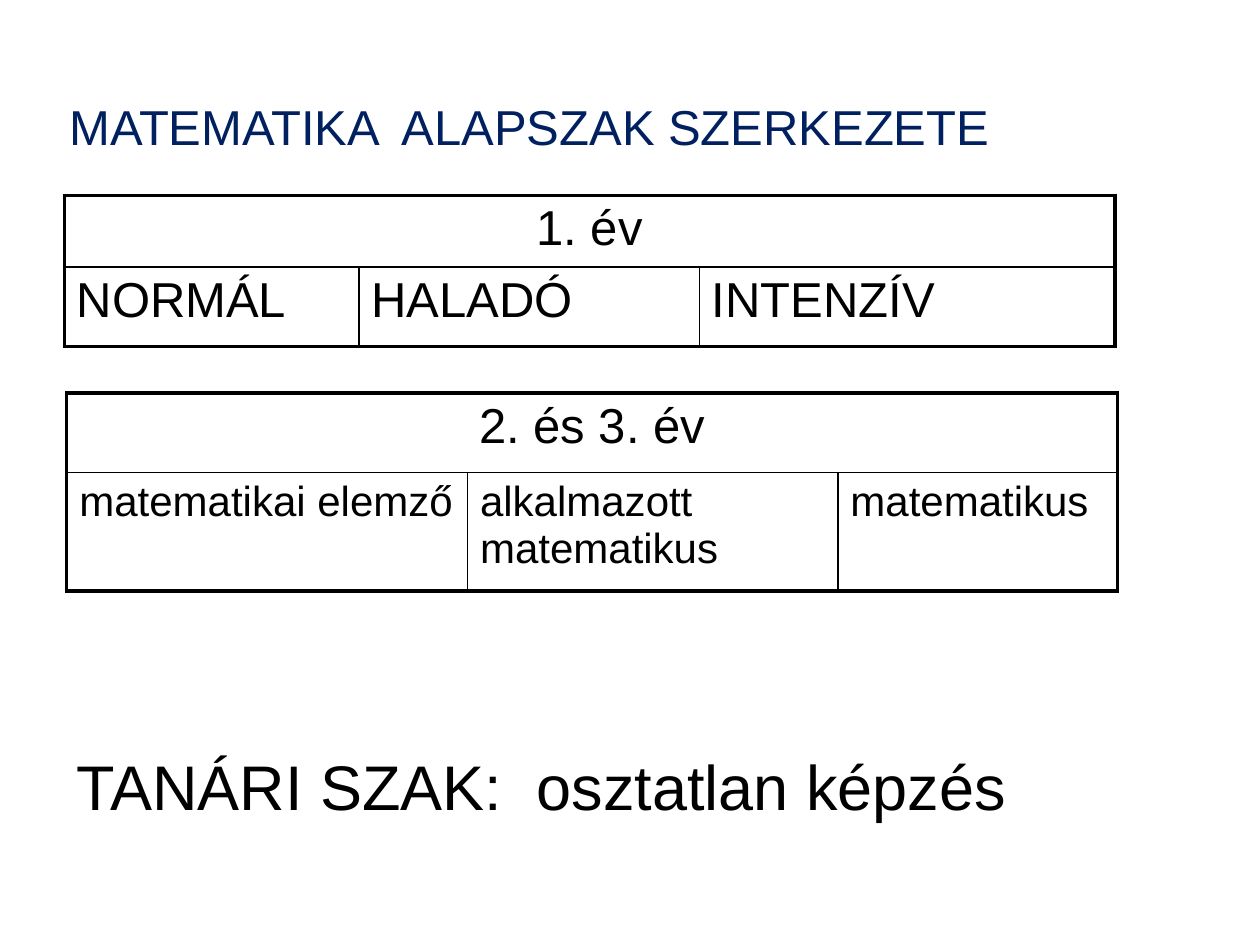
from lxml import etree
from pptx import Presentation
from pptx.dml.color import RGBColor
from pptx.enum import text
from pptx.oxml import ns
from pptx.util import Inches, Pt

TITLE = "MATEMATIKA  ALAPSZAK SZERKEZETE"
FOOTER = "TANÁRI SZAK:  osztatlan képzés"
TABLES = [
    {"head": "1. év", "tracks": ["NORMÁL", "HALADÓ", "INTENZÍV"], "size": 28,
     "left": 0.51, "top": 1.55, "columns": [2.34, 2.7, 3.3], "rows": [0.57, 0.63]},
    {"head": "2. és 3. év",
     "tracks": ["matematikai elemző", "alkalmazott matematikus", "matematikus"], "size": 24,
     "left": 0.53, "top": 3.12, "columns": [3.18, 2.94, 2.22], "rows": [0.63, 0.94]},
]
HEAD_SIZE = 28
OUTER, INNER = 2.25, 1
BLACK, NAVY = "000000", "002060"


def write(frame, words, size, color=BLACK, align=text.PP_ALIGN.LEFT):
    para = frame.paragraphs[0]
    para.alignment = align
    span = para.add_run()
    span.text = words
    for name, value in {"size": Pt(size), "name": "Arial", "bold": False}.items():
        setattr(span.font, name, value)
    span.font.color.rgb = RGBColor.from_string(color)


def set_borders(cell, widths):
    """Draw black cell edges; widths maps L, R, T, B (in that order) to points."""
    properties = cell._tc.get_or_add_tcPr()
    for side, width in widths.items():
        line = etree.SubElement(properties, ns.qn(f"a:ln{side}"), w=str(Pt(width)))
        fill = etree.SubElement(line, ns.qn("a:solidFill"))
        etree.SubElement(fill, ns.qn("a:srgbClr"), val=BLACK)


def add_year_table(page, data):
    columns, rows = data["columns"], data["rows"]
    table = page.shapes.add_table(
        len(rows), len(columns), Inches(data["left"]), Inches(data["top"]),
        Inches(sum(columns)), Inches(sum(rows))).table
    table.first_row = table.horz_banding = False
    for column, width in zip(table.columns, columns):
        column.width = Inches(width)
    for row, height in zip(table.rows, rows):
        row.height = Inches(height)

    last_row, last_column = len(rows) - 1, len(columns) - 1
    for r in range(len(rows)):
        for c in range(len(columns)):
            cell = table.cell(r, c)
            set_borders(cell, {
                "L": OUTER if c == 0 else INNER,
                "R": OUTER if c == last_column or r == 0 else INNER,
                "T": OUTER if r == 0 else INNER,
                "B": OUTER if r == last_row else INNER})
            cell.fill.background()

    table.cell(0, 0).merge(table.cell(0, last_column))
    write(table.cell(0, 0).text_frame, data["head"], HEAD_SIZE, align=text.PP_ALIGN.CENTER)
    for c, track in enumerate(data["tracks"]):
        write(table.cell(1, c).text_frame, track, data["size"])


def place(shape, left, top, width, height):
    shape.left, shape.top = Inches(left), Inches(top)
    shape.width, shape.height = Inches(width), Inches(height)


def main():
    deck = Presentation()
    deck.slide_width, deck.slide_height = Inches(10), Inches(7.5)
    page = deck.slides.add_slide(deck.slide_layouts[5])

    title = page.shapes.title
    place(title, 0.5, 0.35, 7.92, 0.88)
    title_format = {
        "margin_left": Inches(0.05), "margin_right": Inches(0.05),
        "margin_top": 0, "margin_bottom": 0, "word_wrap": True,
        "vertical_anchor": text.MSO_ANCHOR.BOTTOM, "auto_size": text.MSO_AUTO_SIZE.NONE}
    for name, value in title_format.items():
        setattr(title.text_frame, name, value)
    write(title.text_frame, TITLE, 28, NAVY)

    for data in TABLES:
        add_year_table(page, data)

    box = page.shapes.add_textbox(Inches(0.51), Inches(5.88), Inches(8.43), Inches(0.71))
    box.text_frame.word_wrap = True
    box.text_frame.auto_size = text.MSO_AUTO_SIZE.SHAPE_TO_FIT_TEXT
    write(box.text_frame, FOOTER, 36)

    deck.save("out.pptx")


if __name__ == "__main__":
    main()
